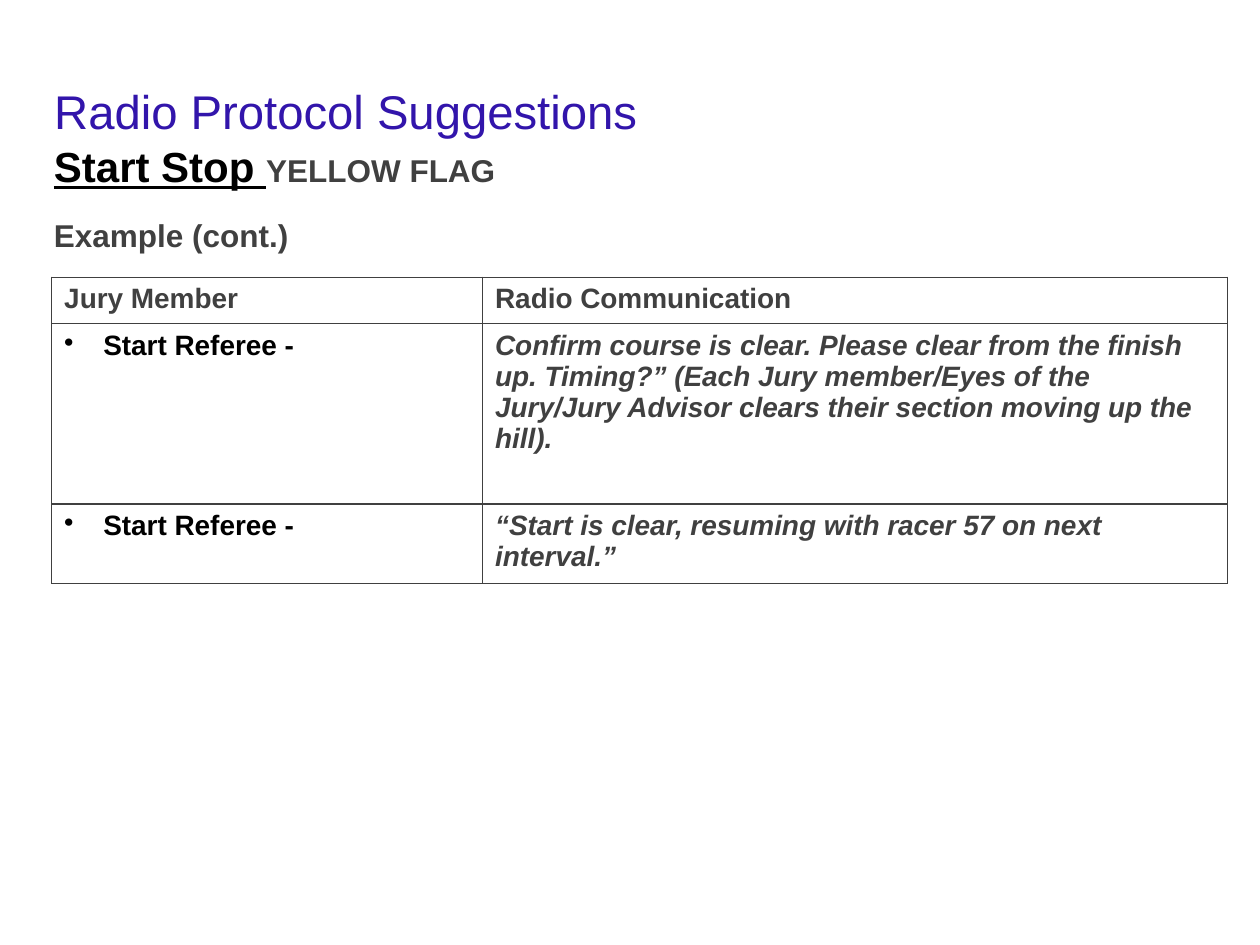
import pptx
import pptx.dml.color
import pptx.enum.text
import pptx.oxml
import pptx.oxml.ns
import pptx.util
from pptx.util import Inches

GREY = "404040"
BLACK = "000000"
PURPLE = "3215AB"
FONT = "Arial"

HEADERS = ("Jury Member", "Radio Communication")
CALLS = (
    ("Start Referee -",
     "Confirm course is clear. Please clear from the finish up. Timing?” "
     "(Each Jury member/Eyes of the Jury/Jury Advisor clears their section "
     "moving up the hill)."),
    ("Start Referee -",
     "“Start is clear, resuming with racer 57 on next interval.”"),
)
COLUMN_WIDTHS = (3.42, 5.91)
ROW_HEIGHTS = (0.37, 1.43, 0.63)


def rgb(value):
    return pptx.dml.color.RGBColor.from_string(value)


def format_run(run, size, color, bold=True, italic=False, underline=False):
    font = run.font
    font.name = FONT
    font.size = pptx.util.Pt(size)
    font.color.rgb = rgb(color)
    font.bold, font.italic, font.underline = bold, italic, underline


def add_run(paragraph, text, size, color, **style):
    run = paragraph.add_run()
    run.text = text
    format_run(run, size, color, **style)


def add_title(slide, text):
    title = slide.shapes.title
    title.left, title.top = Inches(0.33), Inches(0.19)
    title.width, title.height = Inches(8.5), Inches(0.97)
    frame = title.text_frame
    frame.text = text
    frame.vertical_anchor = pptx.enum.text.MSO_ANCHOR.BOTTOM
    paragraph = frame.paragraphs[0]
    paragraph.alignment = pptx.enum.text.PP_ALIGN.LEFT
    paragraph.line_spacing = 0.9
    format_run(paragraph.runs[0], 27, PURPLE, bold=False)


def add_subheading(slide):
    box = slide.shapes.add_textbox(
        Inches(0.33), Inches(1.07), Inches(9.5), Inches(1))
    frame = box.text_frame
    frame.word_wrap = True
    heading = frame.paragraphs[0]
    add_run(heading, "Start Stop ", 24, BLACK, underline=True)
    add_run(heading, "YELLOW FLAG", 18, GREY)
    example = frame.add_paragraph()
    example.space_before = pptx.util.Pt(14)
    add_run(example, "Example (cont.)", 18, GREY)


def set_borders(cell, color, width):
    properties = cell._tc.get_or_add_tcPr()
    for index, side in enumerate(("lnL", "lnR", "lnT", "lnB")):
        line = pptx.oxml.parse_xml(
            f'<a:{side} {pptx.oxml.ns.nsdecls("a")} w="{pptx.util.Pt(width)}">'
            f'<a:solidFill><a:srgbClr val="{color}"/></a:solidFill></a:{side}>')
        properties.insert(index, line)


def add_bullet(paragraph):
    properties = paragraph._p.get_or_add_pPr()
    indent = Inches(0.31)
    properties.set("marL", str(indent))
    properties.set("indent", str(-indent))
    properties.append(pptx.oxml.parse_xml(
        f'<a:buChar {pptx.oxml.ns.nsdecls("a")} char="•"/>'))


def fill_cell(cell, text, color, bullet=False, italic=False):
    cell.text_frame.text = text
    paragraph = cell.text_frame.paragraphs[0]
    if bullet:
        add_bullet(paragraph)
    format_run(paragraph.runs[0], 16, color, italic=italic)
    cell.fill.background()
    set_borders(cell, GREY, 0.75)


def add_radio_table(slide):
    frame = slide.shapes.add_table(
        len(ROW_HEIGHTS), len(COLUMN_WIDTHS), Inches(0.41), Inches(2.2),
        Inches(sum(COLUMN_WIDTHS)), Inches(sum(ROW_HEIGHTS)))
    table = frame.table
    for column, width in zip(table.columns, COLUMN_WIDTHS):
        column.width = Inches(width)
    for row, height in zip(table.rows, ROW_HEIGHTS):
        row.height = Inches(height)
    for index, header in enumerate(HEADERS):
        fill_cell(table.cell(0, index), header, GREY)
    for index, (member, message) in enumerate(CALLS, start=1):
        fill_cell(table.cell(index, 0), member, BLACK, bullet=True)
        fill_cell(table.cell(index, 1), message, GREY, italic=True)


def main():
    presentation = pptx.Presentation()
    presentation.slide_width, presentation.slide_height = Inches(10), Inches(7.5)
    # Title-only layout
    slide = presentation.slides.add_slide(presentation.slide_layouts[5])
    add_title(slide, "Radio Protocol Suggestions")
    add_subheading(slide)
    add_radio_table(slide)
    presentation.save("out.pptx")


if __name__ == "__main__":
    main()
